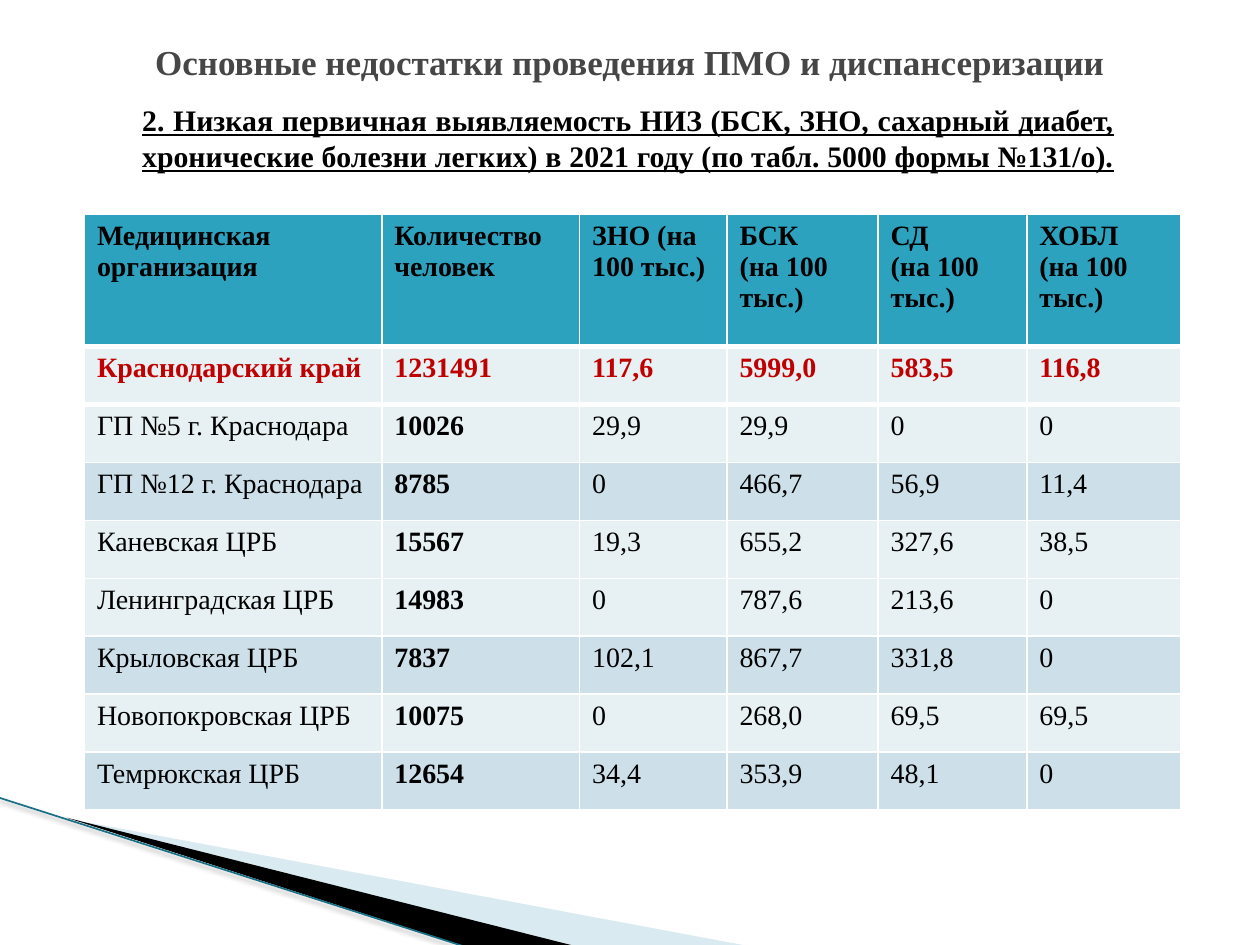
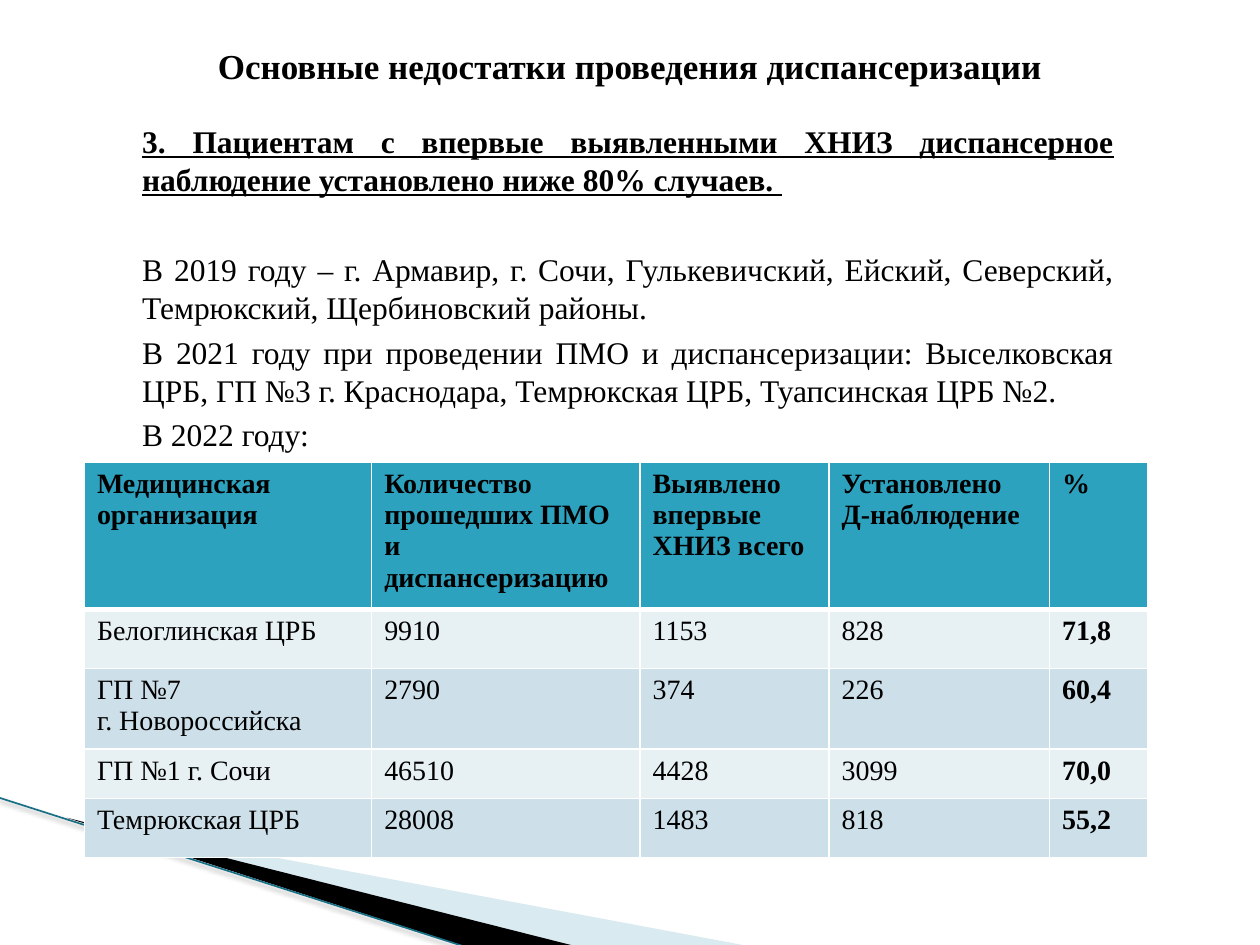
from dataclasses import dataclass

from lxml.etree import SubElement
from pptx import Presentation
from pptx.dml.color import RGBColor
from pptx.enum.shapes import MSO_CONNECTOR
from pptx.enum.text import MSO_ANCHOR, PP_ALIGN
from pptx.oxml.ns import qn
from pptx.util import Inches, Pt


@dataclass(frozen=True)
class Theme:
    font: str = "Times New Roman"
    black: str = "000000"
    white: str = "FFFFFF"
    grey: str = "464646"
    red: str = "C00000"
    header: str = "2DA2BF"
    light: str = "E7F0F3"
    dark: str = "CDDFE8"
    wedge: str = "A0CBDC"
    edge: str = "196F85"
    title_size: int = 20
    body_size: int = 18
    small_body_size: int = 17
    cell_size: int = 16
    thin: float = 0.96
    thick: float = 3


def rgb(value):
    return RGBColor.from_string(value)


def add_color(parent, value, alpha=None):
    color = SubElement(parent, qn("a:srgbClr"), val=value)
    if alpha is not None:
        SubElement(color, qn("a:alpha"), val=str(alpha * 1000))


class Deck:
    def __init__(self, theme):
        self.theme = theme
        self.prs = Presentation()
        self.prs.slide_width, self.prs.slide_height = Inches(10), Inches(7.5)
        self.slide = None

    def new_slide(self):
        self.slide = self.prs.slides.add_slide(self.prs.slide_layouts[6])
        self.wedge([(0.55, 6.5), (5.95, 7.51), (4.56, 7.51)], self.theme.wedge, alpha=40)
        self.wedge([(0.53, 6.49), (4.57, 7.51), (3.72, 7.52)], self.theme.black)
        self.edge_line((-0.01, 6.33), (3.71, 7.52))

    def wedge(self, points, color, alpha=None):
        corners = [(Inches(x), Inches(y)) for x, y in points]
        builder = self.slide.shapes.build_freeform(*corners[0])
        builder.add_line_segments(corners[1:], close=True)
        sp = builder.convert_to_shape()
        sp.shadow.inherit = False
        sp.line.fill.background()
        sp.fill.solid()
        sp.fill.fore_color.rgb = rgb(color)
        if alpha is not None:
            color_el = sp._element.spPr.find(qn("a:solidFill"))[0]
            SubElement(color_el, qn("a:alpha"), val=str(alpha * 1000))

    def edge_line(self, start, end):
        """Draw the thin diagonal with its soft shadow."""
        line = self.slide.shapes.add_connector(
            MSO_CONNECTOR.STRAIGHT, *(Inches(v) for v in start + end))
        line.line.color.rgb = rgb(self.theme.edge)
        line.line.width = Pt(0.95)
        effects = SubElement(line._element.spPr, qn("a:effectLst"))
        shadow = SubElement(effects, qn("a:outerShdw"), blurRad=str(Pt(3.1)),
                            dist=str(Pt(1.6)), dir="5400000", rotWithShape="0")
        add_color(shadow, self.theme.black, alpha=38)

    def style(self, p, color=None, **values):
        for r in p.runs:
            for name, value in {"name": self.theme.font, **values}.items():
                setattr(r.font, name, value)
            r.font.color.rgb = rgb(color or self.theme.black)

    def textbox(self, left, top, width, height):
        sp = self.slide.shapes.add_textbox(*(Inches(v) for v in (left, top, width, height)))
        sp.text_frame.word_wrap = True
        return sp.text_frame

    def title(self, text, height, color=None):
        tf = self.textbox(0.5, 0.05, 9, height)
        tf.vertical_anchor = MSO_ANCHOR.MIDDLE
        p = tf.paragraphs[0]
        p.text, p.alignment = text, PP_ALIGN.CENTER
        self.style(p, color, size=Pt(self.theme.title_size), bold=True)

    def body(self, top, height, size, heading, details=()):
        """Write an underlined heading followed by plain justified paragraphs."""
        tf = self.textbox(0.91, top, 8.03, height)
        tf.text = "\n".join([heading, *details])
        for i, p in enumerate(tf.paragraphs):
            p._p.get_or_add_pPr().set("marL", str(Inches(0.12)))
            p.alignment = PP_ALIGN.JUSTIFY
            if i:
                p.space_before = Pt(30 if i == 1 else 4)
            self.style(p, size=Pt(size), bold=i == 0, underline=i == 0)

    def borders(self, cell, top, bottom):
        tcPr = cell._tc.get_or_add_tcPr()
        thin = self.theme.thin
        sides = {"a:lnL": thin, "a:lnR": thin, "a:lnT": top, "a:lnB": bottom}
        for i, (tag, width) in enumerate(sides.items()):
            ln = SubElement(tcPr, qn(tag), w=str(Pt(width)))
            add_color(SubElement(ln, qn("a:solidFill")), self.theme.white)
            tcPr.insert(i, ln)

    def table(self, top, widths, heights, rows, shades, bold_col, has_total=False):
        """Shades holds L (light) or D (dark) for each row under the header."""
        th = self.theme
        table = self.slide.shapes.add_table(
            len(rows), len(widths), Inches(0.67), Inches(top),
            Inches(sum(widths)), Inches(sum(heights))).table
        table.horz_banding = False
        for column, width in zip(table.columns, widths):
            column.width = Inches(width)
        for row, height in zip(table.rows, heights):
            row.height = Inches(height)
        fills = [th.header] + [{"L": th.light, "D": th.dark}[s] for s in shades]
        last_thick = 1 if has_total else 0
        for i, values in enumerate(rows):
            is_total = has_total and i == 1
            top_width = th.thick if 0 < i <= last_thick + 1 else th.thin
            bottom_width = th.thick if i <= last_thick else th.thin
            for j, value in enumerate(values):
                cell = table.cell(i, j)
                cell.text = value
                cell.fill.solid()
                cell.fill.fore_color.rgb = rgb(fills[i])
                self.borders(cell, top_width, bottom_width)
                for p in cell.text_frame.paragraphs:
                    self.style(p, th.red if is_total else th.black,
                               size=Pt(th.cell_size),
                               bold=i <= last_thick or j == bold_col)


DETECTION_ROWS = [
    ("Медицинская организация", "Количество человек", "ЗНО (на 100 тыс.)",
     "БСК\n(на 100 тыс.)", "СД\n(на 100 тыс.)", "ХОБЛ\n(на 100 тыс.)"),
    ("Краснодарский край", "1231491", "117,6", "5999,0", "583,5", "116,8"),
    ("ГП №5 г. Краснодара", "10026", "29,9", "29,9", "0", "0"),
    ("ГП №12 г. Краснодара", "8785", "0", "466,7", "56,9", "11,4"),
    ("Каневская ЦРБ", "15567", "19,3", "655,2", "327,6", "38,5"),
    ("Ленинградская ЦРБ", "14983", "0", "787,6", "213,6", "0"),
    ("Крыловская ЦРБ", "7837", "102,1", "867,7", "331,8", "0"),
    ("Новопокровская ЦРБ", "10075", "0", "268,0", "69,5", "69,5"),
    ("Темрюкская ЦРБ", "12654", "34,4", "353,9", "48,1", "0"),
]

FOLLOW_UP_ROWS = [
    ("Медицинская организация", "Количество прошедших ПМО и диспансеризацию",
     "Выявлено впервые ХНИЗ всего", "Установлено Д-наблюдение", "%"),
    ("Белоглинская ЦРБ", "9910", "1153", "828", "71,8"),
    ("ГП №7\nг. Новороссийска", "2790", "374", "226", "60,4"),
    ("ГП №1 г. Сочи", "46510", "4428", "3099", "70,0"),
    ("Темрюкская ЦРБ", "28008", "1483", "818", "55,2"),
]


def main():
    theme = Theme()
    deck = Deck(theme)

    deck.new_slide()
    deck.body(0.76, 0.79, theme.small_body_size,
              "2. Низкая первичная выявляемость НИЗ (БСК, ЗНО, сахарный диабет, "
              "хронические болезни легких) в 2021 году (по табл. 5000 формы №131/о). ")
    deck.title("Основные недостатки проведения ПМО и диспансеризации", 0.87, theme.grey)
    deck.table(1.7, [2.36, 1.57, 1.17, 1.2, 1.18, 1.22], [1.05] + [0.46] * 8,
               DETECTION_ROWS, "LLDLLDLD", bold_col=1, has_total=True)

    deck.new_slide()
    deck.body(0.92, 2.75, theme.body_size,
              "3. Пациентам с впервые выявленными ХНИЗ диспансерное наблюдение "
              "установлено ниже 80% случаев. ", [
                  "В 2019 году – г. Армавир, г. Сочи, Гулькевичский, Ейский, Северский, "
                  "Темрюкский, Щербиновский районы. ",
                  "В 2021 году при проведении ПМО и диспансеризации: Выселковская ЦРБ, "
                  "ГП №3 г. Краснодара, Темрюкская ЦРБ, Туапсинская ЦРБ №2.",
                  "В 2022 году:"])
    deck.title("Основные недостатки проведения диспансеризации", 0.94)
    deck.table(3.67, [2.28, 2.13, 1.5, 1.75, 0.78], [1.16, 0.47, 0.64, 0.39, 0.47],
               FOLLOW_UP_ROWS, "LDLD", bold_col=4)

    deck.prs.save("out.pptx")


if __name__ == "__main__":
    main()
